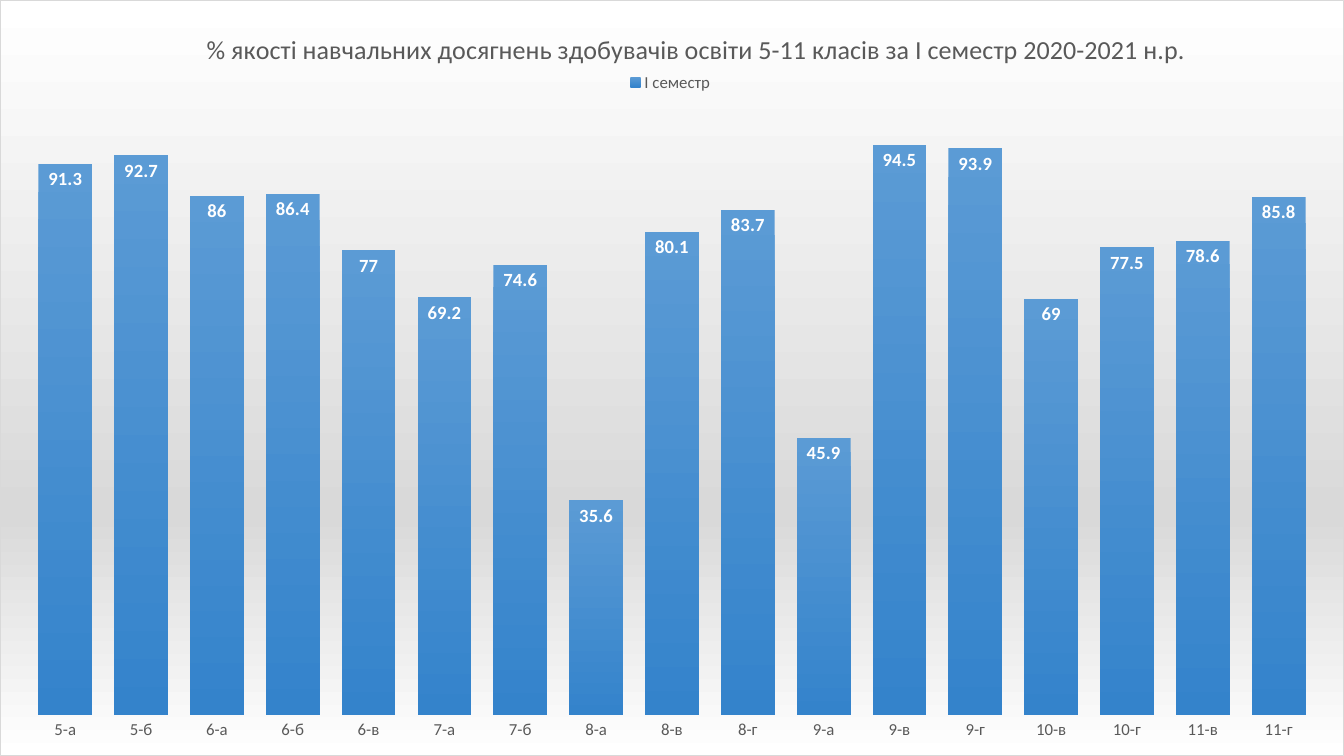
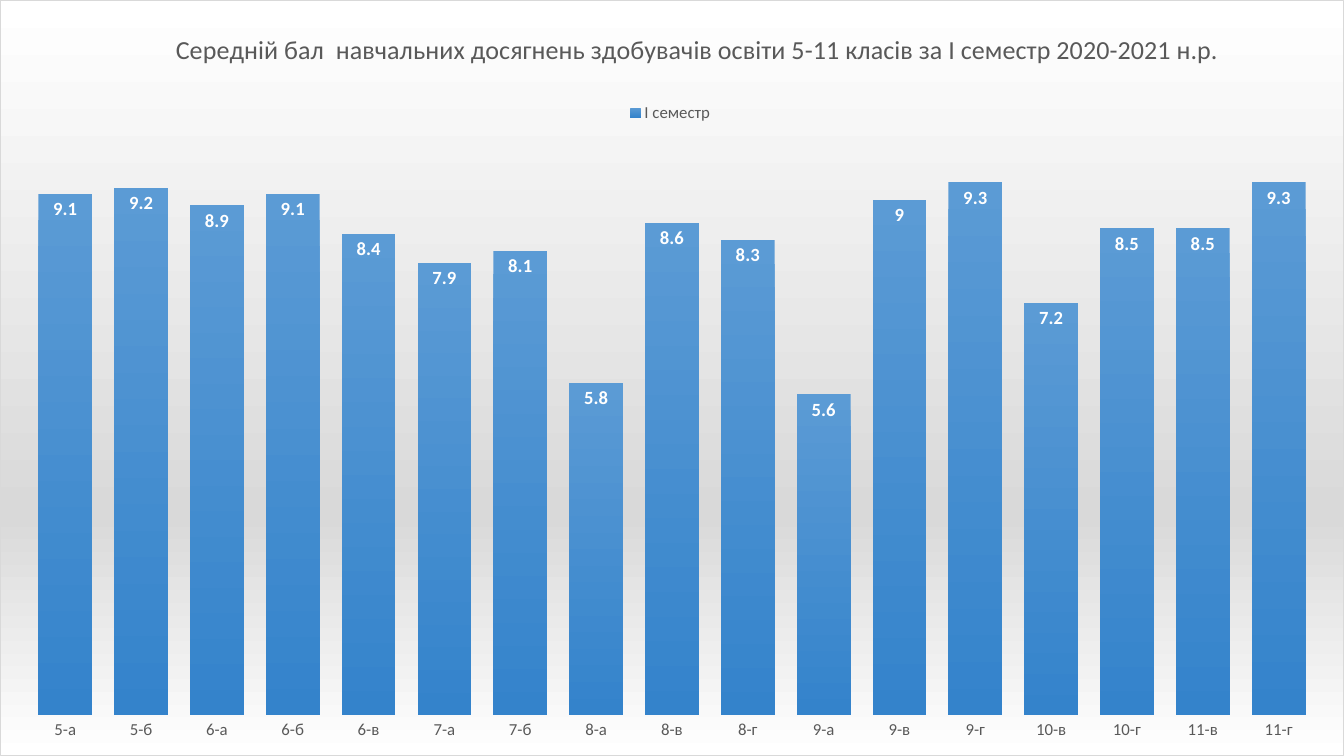
"""Two column charts of class results for the first semester."""
from dataclasses import dataclass

import pptx
import pptx.chart.data
import pptx.dml.color
import pptx.enum.chart
import pptx.oxml
import pptx.oxml.ns
import pptx.util
from pptx.util import Inches


@dataclass(frozen=True)
class Theme:
    font: str = "Calibri"
    text: str = "595959"
    label: str = "FFFFFF"
    border: str = "D9D9D9"
    area: tuple = ((0, "FFFFFF"), (68, "D9D9D9"), (100, "FFFFFF"))
    column: tuple = ((0, "5B9BD5"), (100, "3483CB"))
    title_size: float = 18.6
    axis_size: float = 12
    label_size: float = 13.3


theme = Theme()
namespaces = pptx.oxml.ns.nsdecls("c", "a")


def shape_properties(stops, line):
    marks = "".join(
        f'<a:gs pos="{place * 1000}"><a:srgbClr val="{color}"/></a:gs>'
        for place, color in stops
    )
    return pptx.oxml.parse_xml(
        f"<c:spPr {namespaces}><a:gradFill><a:gsLst>{marks}</a:gsLst>"
        f'<a:lin ang="5400000" scaled="0"/></a:gradFill>{line}</c:spPr>'
    )


def manual_layout(inner="", **places):
    modes = "".join(f'<c:{key}Mode val="edge"/>' for key in "xy")
    values = "".join(f'<c:{key} val="{value}"/>' for key, value in places.items())
    return pptx.oxml.parse_xml(
        f"<c:layout {namespaces}><c:manualLayout>{inner}{modes}{values}"
        "</c:manualLayout></c:layout>"
    )


classes = [
    "5-а", "5-б", "6-а", "6-б", "6-в", "7-а", "7-б", "8-а", "8-в",
    "8-г", "9-а", "9-в", "9-г", "10-в", "10-г", "11-в", "11-г",
]
reports = [
    {
        "title": "% якості навчальних досягнень здобувачів освіти 5-11 класів за І семестр 2020-2021 н.р.",
        "values": [91.3, 92.7, 86, 86.4, 77, 69.2, 74.6, 35.6, 80.1,
                   83.7, 45.9, 94.5, 93.9, 69, 77.5, 78.6, 85.8],
        "maximum": 100, "title_left": 0.15, "legend_top": 0.09, "plot_top": 0.147,
    },
    {
        "title": "Середній бал  навчальних досягнень здобувачів освіти 5-11 класів за І семестр 2020-2021 н.р.",
        "values": [9.1, 9.2, 8.9, 9.1, 8.4, 7.9, 8.1, 5.8, 8.6,
                   8.3, 5.6, 9, 9.3, 7.2, 8.5, 8.5, 9.3],
        "maximum": 10, "title_left": 0.127, "legend_top": 0.13, "plot_top": 0.188,
    },
]
plot_bottom = 0.947

deck = pptx.Presentation()
deck.slide_width = Inches(13.33)
deck.slide_height = Inches(7.5)

for report in reports:
    page = deck.slides.add_slide(deck.slide_layouts[6])
    data = pptx.chart.data.CategoryChartData()
    data.categories = classes
    data.add_series("І семестр", report["values"])
    chart = page.shapes.add_chart(
        pptx.enum.chart.XL_CHART_TYPE.COLUMN_CLUSTERED,
        0, 0, deck.slide_width, deck.slide_height, data,
    ).chart
    chart.font.name = theme.font
    chart.font.size = pptx.util.Pt(10)

    chart.has_title = True
    para = chart.chart_title.text_frame.paragraphs[0]
    span = para.add_run()
    span.text = report["title"]

    chart.has_legend = True
    legend = chart.legend
    legend.position = pptx.enum.chart.XL_LEGEND_POSITION.TOP
    legend.include_in_layout = False

    classes_axis = chart.category_axis
    classes_axis.major_tick_mark = pptx.enum.chart.XL_TICK_MARK.NONE
    classes_axis.format.line.fill.background()
    values_axis = chart.value_axis
    values_axis.minimum_scale = 0
    values_axis.maximum_scale = report["maximum"]
    values_axis.has_major_gridlines = False
    values_axis.visible = False

    plot = chart.plots[0]
    plot.gap_width = 41
    plot.vary_by_categories = False
    plot.has_data_labels = True
    labels = plot.data_labels
    labels.show_value = True
    labels.position = pptx.enum.chart.XL_LABEL_POSITION.INSIDE_END

    for font, size, color, bold in (
        (span.font, theme.title_size, theme.text, False),
        (legend.font, theme.axis_size, theme.text, False),
        (classes_axis.tick_labels.font, theme.axis_size, theme.text, False),
        (labels.font, theme.label_size, theme.label, True),
    ):
        font.name = theme.font
        font.size = pptx.util.Pt(size)
        font.bold = bold
        font.color.rgb = pptx.dml.color.RGBColor.from_string(color)

    series = plot.series[0]
    series.invert_if_negative = False
    blank = series._element.get_or_add_spPr()
    series._element.replace(blank, shape_properties(theme.column, "<a:ln><a:noFill/></a:ln>"))
    border = (
        f'<a:ln w="9525"><a:solidFill><a:srgbClr val="{theme.border}"/>'
        "</a:solidFill></a:ln>"
    )
    root = chart._chartSpace
    root.chart.addnext(shape_properties(theme.area, border))

    for old in root.xpath(".//c:layout"):
        old.getparent().remove(old)
    root.xpath(".//c:title/c:overlay")[0].addprevious(
        manual_layout(x=report["title_left"], y=0.034))
    root.xpath(".//c:legend/c:overlay")[0].addprevious(
        manual_layout(x=0.465, y=report["legend_top"]))
    root.xpath(".//c:plotArea")[0].insert(0, manual_layout(
        '<c:layoutTarget val="inner"/>',
        x=0.02, y=report["plot_top"], w=0.96, h=round(plot_bottom - report["plot_top"], 3)))

deck.save("out.pptx")
